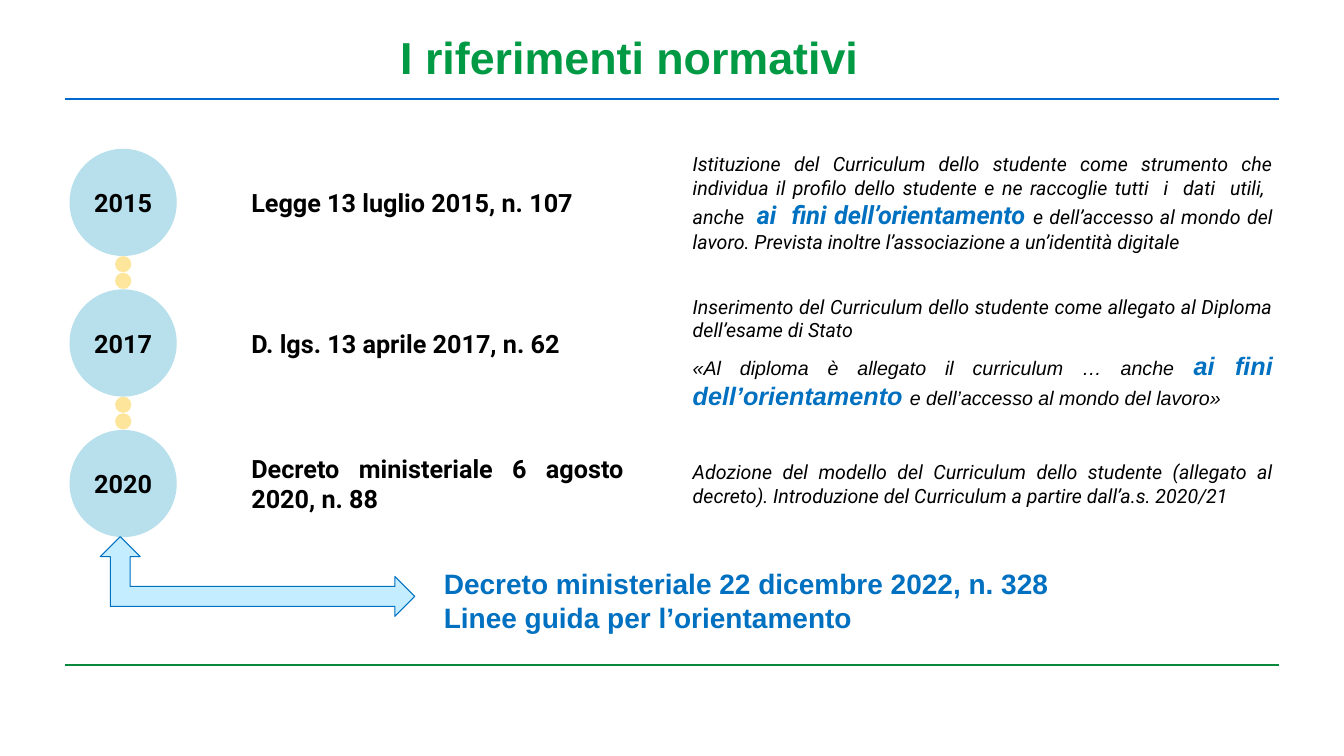
from pptx import Presentation
from pptx.dml.color import RGBColor
from pptx.enum.shapes import MSO_CONNECTOR as Connector, MSO_SHAPE as Shape
from pptx.enum.text import MSO_ANCHOR as Anchor, PP_ALIGN as Align
from pptx.oxml.ns import qn
from pptx.util import Pt
from lxml.etree import SubElement

COLORS = {
    "title": "009A44",
    "top_rule": "0068CF",
    "bottom_rule": "09893C",
    "text": "000000",
    "accent": "0070C0",
    "circle": "B7E0EC",
    "dot": "FDE69B",
    "arrow": "C4EDFF",
}
INSET = 4.5
PITCH = 100.4
CIRCLE_LEFT, CIRCLE_TOP, CIRCLE_SIZE = 49.7, 106.3, 76.6
DOT_SIZE = 11.6
DOT_PITCH = (PITCH - CIRCLE_SIZE) / 2

MILESTONES = [
    ("2015", "Legge 13 luglio 2015, n. 107", 99.4, [
        ("Roboto", [
            ("Istituzione del Curriculum dello studente come strumento che individua "
             "il profilo dello studente e ne raccoglie tutti  i  dati  utili,  anche  ", False),
            ("ai  fini dell’orientamento ", True),
            ("e dell’accesso al mondo del lavoro. Prevista inoltre l’associazione "
             "a un’identità digitale ", False),
        ]),
    ]),
    ("2017", "D. lgs. 13 aprile 2017, n. 62 ", 206.6, [
        ("Roboto", [
            ("Inserimento del Curriculum dello studente come allegato al Diploma "
             "dell’esame di Stato", False),
        ]),
        ("Arial", [
            ("«Al diploma è allegato il curriculum … anche ", False),
            ("ai fini dell’orientamento ", True),
            ("e dell’accesso al mondo del lavoro»", False),
        ]),
    ]),
    ("2020", "Decreto ministeriale 6 agosto 2020, n. 88", 300.2, [
        ("Roboto", [
            ("Adozione del modello del Curriculum dello studente (allegato al decreto). "
             "Introduzione del Curriculum a partire dall’a.s. 2020/21", False),
        ]),
    ]),
]


def rgb(name):
    return RGBColor.from_string(COLORS[name])


def set_font(font, name, size, color, bold=False, italic=False):
    font.name = name
    font.size = Pt(size)
    font.color.rgb = rgb(color)
    font.bold = bold
    font.italic = italic


def prepare_frame(shape, inset=INSET):
    frame = shape.text_frame
    frame.word_wrap = True
    frame.vertical_anchor = Anchor.MIDDLE
    frame.margin_left = frame.margin_right = Pt(inset)
    frame.margin_top = frame.margin_bottom = Pt(inset)
    return frame


def add_box(page, left, top, width, height):
    box = page.shapes.add_textbox(Pt(left), Pt(top), Pt(width), Pt(height))
    return prepare_frame(box)


def write_para(para, text, name, size, color, align, after=0):
    para.text = text
    para.alignment = align
    para.space_after = Pt(after)
    set_font(para.font, name, size, color, bold=True)


def add_rule(page, top, color):
    rule = page.shapes.add_connector(
        Connector.STRAIGHT, Pt(46.4), Pt(top), Pt(913.7), Pt(top))
    rule.line.color.rgb = rgb(color)
    rule.line.width = Pt(1.5)
    SubElement(rule._element.spPr, qn("a:effectLst"))


def add_filled(page, kind, left, top, width, height, color):
    shape = page.shapes.add_shape(kind, Pt(left), Pt(top), Pt(width), Pt(height))
    shape.shadow.inherit = False
    shape.fill.solid()
    shape.fill.fore_color.rgb = rgb(color)
    shape.line.fill.background()
    return shape


def add_year(page, year, top):
    circle = add_filled(page, Shape.OVAL, CIRCLE_LEFT, top, CIRCLE_SIZE, CIRCLE_SIZE, "circle")
    para = prepare_frame(circle).paragraphs[0]
    write_para(para, year, "Roboto", 18, "text", Align.CENTER)


def add_dots(page, top):
    left = CIRCLE_LEFT + (CIRCLE_SIZE - DOT_SIZE) / 2
    for index in range(2):
        add_filled(page, Shape.OVAL, left, top + index * DOT_PITCH, DOT_SIZE, DOT_SIZE, "dot")


def add_description(page, top, paragraphs):
    frame = add_box(page, 490.3, top, 423.4, 90.7)
    for index, (name, spans) in enumerate(paragraphs):
        para = frame.add_paragraph() if index else frame.paragraphs[0]
        para.alignment = Align.JUSTIFY
        para.space_after = Pt(6)
        for text, strong in spans:
            span = para.add_run()
            span.text = text
            size, color = (18, "accent") if strong else (14, "text")
            set_font(span.font, name, size, color, bold=strong, italic=True)


def add_arrow(page):
    arrow = add_filled(page, Shape.LEFT_UP_ARROW, 155.5, 299.5, 56.9, 224.6, "arrow")
    arrow.rotation = 90
    arrow.line.color.rgb = rgb("accent")
    arrow.line.width = Pt(0.75)


def main():
    deck = Presentation()
    deck.slide_width, deck.slide_height = Pt(960), Pt(540)
    page = deck.slides.add_slide(deck.slide_layouts[6])

    add_rule(page, 475.2, "bottom_rule")
    add_rule(page, 70.6, "top_rule")
    title = add_box(page, 46.1, -11.5, 807.1, 104.4)
    write_para(title.paragraphs[0], "I riferimenti normativi", "Arial", 32, "title", Align.CENTER)

    for index, (year, law, description_top, paragraphs) in enumerate(MILESTONES):
        top = CIRCLE_TOP + index * PITCH
        add_year(page, year, top)
        if index < len(MILESTONES) - 1:
            add_dots(page, top + CIRCLE_SIZE)
        law_frame = add_box(page, 175, top + 13.2, 275, 50.4)
        write_para(law_frame.paragraphs[0], law, "Roboto", 18, "text", Align.JUSTIFY, 6)
        add_description(page, description_top, paragraphs)

    decree = add_box(page, 312.5, 400.3, 617.8, 56.9)
    write_para(
        decree.paragraphs[0],
        "Decreto ministeriale 22 dicembre 2022, n. 328 \vLinee guida per l’orientamento",
        "Arial", 20, "accent", Align.LEFT, 6)
    add_arrow(page)
    deck.save("out.pptx")


if __name__ == "__main__":
    main()
